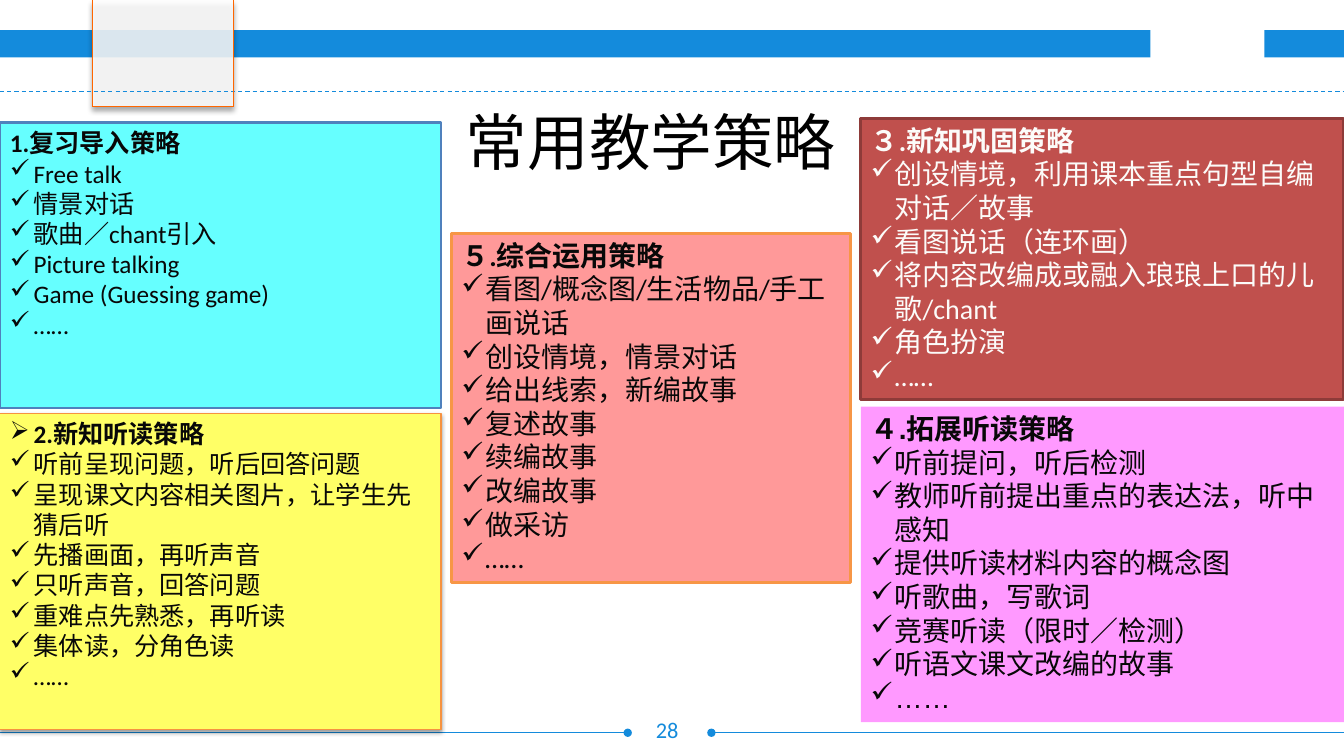
from dataclasses import dataclass
from typing import Any, NamedTuple, Optional

from lxml.etree import SubElement
from pptx import Presentation
from pptx.dml.color import RGBColor
from pptx.enum.dml import MSO_LINE_DASH_STYLE as Dash
from pptx.enum.shapes import MSO_CONNECTOR as Connector, MSO_SHAPE as Preset
from pptx.enum.text import MSO_ANCHOR as Anchor, MSO_AUTO_SIZE as AutoSize, PP_ALIGN as Align
from pptx.oxml.ns import qn
from pptx.util import Pt

CHECK, ARROW = "✓", "➢"


@dataclass(frozen=True)
class Theme:
    font: str = "Calibri"
    plain_font: str = "Arial"
    blue: str = "148BDC"
    orange: str = "FF6600"
    white: str = "FFFFFF"
    black: str = "000000"
    ink: str = "080808"
    pale: str = "FCFBF9"
    title_size: float = 44
    large_size: float = 20
    body_size: float = 18
    number_size: float = 16
    hairline: float = 0.75
    border: float = 2
    bullet_indent: float = 17


THEME = Theme()


class Frame(NamedTuple):
    left: float
    top: float
    width: float
    height: float


class Shadow(NamedTuple):
    alpha: int
    blur: float
    distance: float


class Rule(NamedTuple):
    start: tuple[float, float]
    end: tuple[float, float]
    color: str = THEME.blue
    dash: Optional[Dash] = None
    oval: Optional[str] = None


@dataclass(frozen=True)
class Block:
    frame: Frame
    fill: str
    line: Optional[str] = None
    line_width: float = THEME.border
    alpha: int = 100
    shadow: Optional[Shadow] = None


@dataclass(frozen=True)
class Panel:
    block: Block
    heading: str
    items: list[str]
    size: float = THEME.large_size
    color: str = THEME.ink
    font: str = THEME.font
    heading_bullet: Optional[str] = None


TAB = Frame(66.2, 0, 100.8, 76.3)
TAB_RIGHT, TAB_BOTTOM = TAB.left + TAB.width, TAB.top + TAB.height
PAGE_WIDTH, PAGE_HEIGHT = 960.5, 540
FOOTER_Y = 523.4

BLOCKS = [
    Block(Frame(0, 21.6, 822.2, 19.4), THEME.blue),
    Block(Frame(903.6, 21.6, 56.9, 19.4), THEME.blue),
    Block(TAB, THEME.white, alpha=85, shadow=Shadow(40, 4, 3)),
]
RULES = [
    Rule((0, 65.5), (PAGE_WIDTH, 65.5), dash=Dash.DASH),
    Rule((TAB.left, TAB_BOTTOM), (TAB_RIGHT, TAB_BOTTOM), THEME.orange),
    Rule((TAB.left, TAB_BOTTOM), (TAB.left, 0), THEME.orange),
    Rule((TAB_RIGHT, TAB_BOTTOM), (TAB_RIGHT, 0), THEME.orange),
    Rule((0, FOOTER_Y), (448.6, FOOTER_Y), oval="a:tailEnd"),
    Rule((508.4, FOOTER_Y), (PAGE_WIDTH, FOOTER_Y), oval="a:headEnd"),
]
PANELS = [
    Panel(Block(Frame(0, 87.6, 315.2, 203.9), "66FFFF", "4F81BD"), "1.复习导入策略",
          ["Free talk", "情景对话", "歌曲／chant引入", "Picture talking",
           "Game (Guessing game)", "……"], size=THEME.body_size),
    Panel(Block(Frame(0, 295.4, 315.2, 225.6), "FFFF66", "F69240", THEME.hairline,
                shadow=Shadow(38, 3.1, 1.6)), "2.新知听读策略",
          ["听前呈现问题，听后回答问题", "呈现课文内容相关图片，让学生先猜后听",
           "先播画面，再听声音", "只听声音，回答问题", "重难点先熟悉，再听读",
           "集体读，分角色读", "……"], size=THEME.body_size, heading_bullet=ARROW),
    Panel(Block(Frame(615.2, 84.5, 345.2, 201), "C0504D", "8E3B39"), "３.新知巩固策略",
          ["创设情境，利用课本重点句型自编对话／故事", "看图说话（连环画）",
           "将内容改编成或融入琅琅上口的儿歌/chant", "角色扮演", "……"], color=THEME.pale),
    Panel(Block(Frame(615.2, 290.4, 345.2, 225.4), "FF99FF"), "４.拓展听读策略",
          ["听前提问，听后检测", "教师听前提出重点的表达法，听中感知",
           "提供听读材料内容的概念图", "听歌曲，写歌词", "竞赛听读（限时／检测）",
           "听语文课文改编的故事", "……"], font=THEME.plain_font),
    Panel(Block(Frame(322.6, 166.6, 285.4, 249.6), "FF9999", "F79646"), "５.综合运用策略",
          ["看图/概念图/生活物品/手工画说话", "创设情境，情景对话", "给出线索，新编故事",
           "复述故事", "续编故事", "改编故事", "做采访", "……"]),
]


def points(values: tuple[float, ...]) -> list[Pt]:
    """Turn plain numbers into point lengths."""
    return [Pt(value) for value in values]


def apply(target: Any, values: dict[str, Any]) -> None:
    """Set every named attribute on the target."""
    for name, value in values.items():
        setattr(target, name, value)


def write(para: Any, text: str, size: float, color: str, style: dict[str, Any]) -> None:
    """Add one formatted span to a paragraph."""
    span = para.add_run()
    span.text = text
    apply(span.font, {"name": THEME.font, "size": Pt(size), "bold": False} | style)
    span.font.color.rgb = RGBColor.from_string(color)


def add_bullet(para: Any, mark: str) -> None:
    """Give a paragraph a hanging bullet."""
    indent = Pt(THEME.bullet_indent)
    properties = para._p.get_or_add_pPr()
    properties.set("marL", str(indent))
    properties.set("indent", str(-indent))
    SubElement(properties, qn("a:buChar"), char=mark)


def draw_block(page: Any, block: Block) -> Any:
    """Draw a filled rectangle with its outline and shadow."""
    box = page.shapes.add_shape(Preset.RECTANGLE, *points(block.frame))
    box.fill.solid()
    box.fill.fore_color.rgb = RGBColor.from_string(block.fill)
    if block.line:
        box.line.color.rgb = RGBColor.from_string(block.line)
        box.line.width = Pt(block.line_width)
    else:
        box.line.fill.background()
    box.shadow.inherit = False
    properties = box._element.spPr
    if block.alpha < 100:
        color = properties.find(qn("a:solidFill")).find(qn("a:srgbClr"))
        SubElement(color, qn("a:alpha"), val=str(block.alpha * 1000))
    if block.shadow:
        outer = SubElement(properties.find(qn("a:effectLst")), qn("a:outerShdw"),
                           blurRad=str(Pt(block.shadow.blur)), dir="5400000",
                           dist=str(Pt(block.shadow.distance)), rotWithShape="0")
        color = SubElement(outer, qn("a:srgbClr"), val=THEME.black)
        SubElement(color, qn("a:alpha"), val=str(block.shadow.alpha * 1000))
    return box


def draw_rule(page: Any, rule: Rule) -> None:
    """Draw a straight line with an optional dash or oval end."""
    line = page.shapes.add_connector(Connector.STRAIGHT, *points(rule.start + rule.end))
    line.line.color.rgb = RGBColor.from_string(rule.color)
    apply(line.line, {"width": Pt(THEME.hairline), "dash_style": rule.dash})
    properties = line._element.spPr
    if rule.oval:
        SubElement(properties.find(qn("a:ln")), qn(rule.oval), type="oval")
    SubElement(properties, qn("a:effectLst"))


def draw_panel(page: Any, panel: Panel) -> None:
    """Draw a strategy panel with a bold heading and checked items."""
    frame = draw_block(page, panel.block).text_frame
    apply(frame, {"word_wrap": True, "vertical_anchor": Anchor.TOP})
    lines = [(panel.heading, panel.heading_bullet)] + [(item, CHECK) for item in panel.items]
    for index, (text, mark) in enumerate(lines):
        para = frame.add_paragraph() if index else frame.paragraphs[0]
        para.alignment = Align.LEFT
        if mark:
            add_bullet(para, mark)
        write(para, text, panel.size, panel.color, {"name": panel.font, "bold": index == 0})


def write_centred(box: Any, text: str, size: float, color: str) -> None:
    """Fill a text holder with one centred line."""
    frame = box.text_frame
    apply(frame, {"word_wrap": True, "vertical_anchor": Anchor.TOP, "auto_size": AutoSize.NONE})
    para = frame.paragraphs[0]
    para.alignment = Align.CENTER
    write(para, text, size, color, {})


def main() -> None:
    """Build and save the deck."""
    deck = Presentation()
    apply(deck, {"slide_width": Pt(PAGE_WIDTH), "slide_height": Pt(PAGE_HEIGHT)})
    page = deck.slides.add_slide(deck.slide_layouts.get_by_name("Title Only"))
    title = page.shapes.title
    apply(title, dict(zip(Frame._fields, points(Frame(20.9, 70.6, 888.5, 95.8)))))
    write_centred(title, "常用教学策略", THEME.title_size, THEME.black)
    for draw, elements in ((draw_block, BLOCKS), (draw_rule, RULES), (draw_panel, PANELS)):
        for element in elements:
            draw(page, element)
    number = page.shapes.add_textbox(*points(Frame(446.6, 508.1, 60.5, 26.6)))
    write_centred(number, "28", THEME.number_size, THEME.blue)
    deck.save("out.pptx")


if __name__ == "__main__":
    main()
